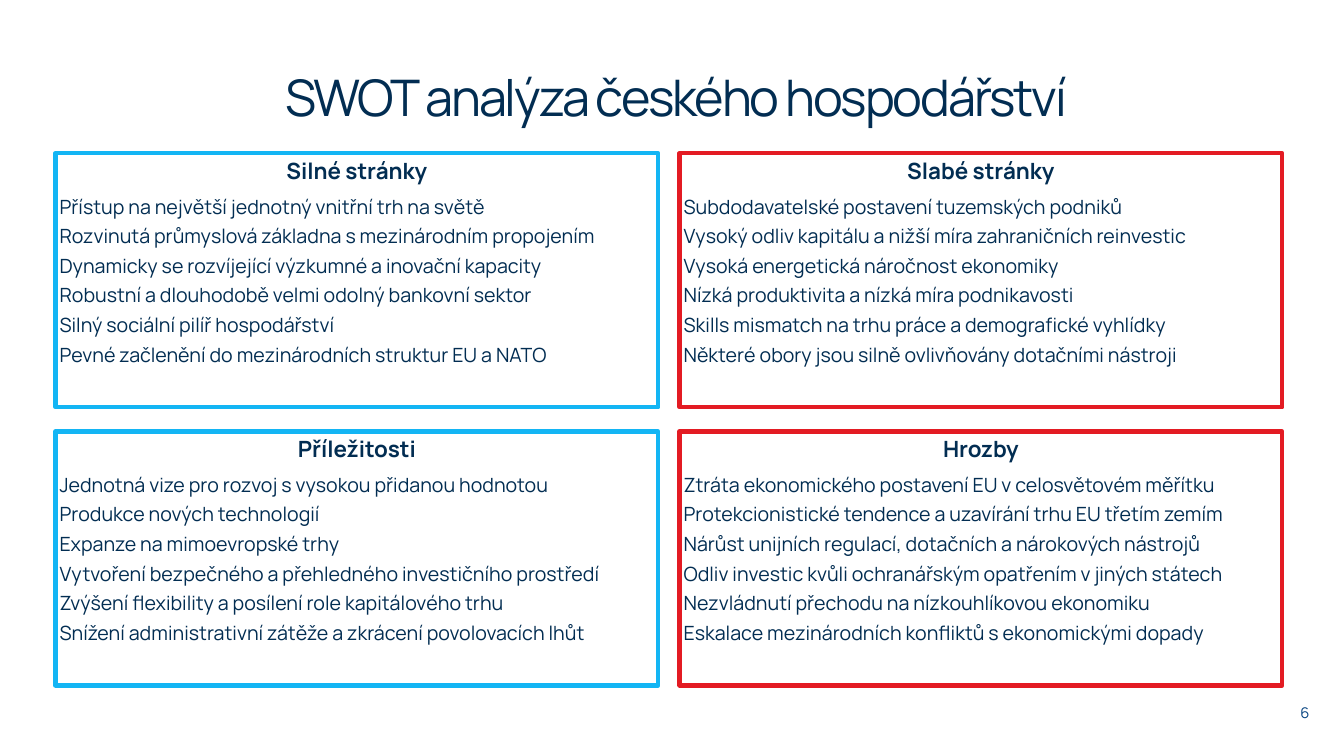
from dataclasses import dataclass

import lxml.etree
import pptx
import pptx.dml.color
import pptx.enum.text
import pptx.oxml.ns
import pptx.util

ALIGN = pptx.enum.text.PP_ALIGN
ANCHOR = pptx.enum.text.MSO_ANCHOR


@dataclass(frozen=True)
class Theme:
    font: str = "Manrope"
    ink: str = "022D52"
    page: str = "044280"
    paper: str = "FFFFFF"
    positive: str = "13B5F4"
    negative: str = "E31B23"
    title_pt: float = 36
    heading_pt: float = 16
    item_pt: float = 14
    page_pt: float = 10.5


@dataclass(frozen=True)
class Area:
    """A rectangle in percent of the slide's width and height."""
    left: float
    top: float
    width: float
    height: float


@dataclass(frozen=True)
class Quadrant:
    col: int
    row: int
    colour: str
    heading: str
    items: tuple[str, ...]


THEME = Theme()
SLIDE_W = pptx.util.Inches(13.33)
SLIDE_H = pptx.util.Inches(7.5)
TITLE = Area(4.13, 8.13, 92.4, 10.13)
PAGE_NUMBER = Area(85.8, 92.4, 12.38, 3.87)
FIRST_CELL = Area(4.13, 20.27, 44.85, 33.6)
COL_STEP, ROW_STEP = 46.43, 36.8

QUADRANTS = (
    Quadrant(0, 0, THEME.positive, "Silné stránky", (
        "Přístup na největší jednotný vnitřní trh na světě",
        "Rozvinutá průmyslová základna s mezinárodním propojením",
        "Dynamicky se rozvíjející výzkumné a inovační kapacity",
        "Robustní a dlouhodobě velmi odolný bankovní sektor",
        "Silný sociální pilíř hospodářství",
        "Pevné začlenění do mezinárodních struktur EU a NATO",
    )),
    Quadrant(0, 1, THEME.positive, "Příležitosti", (
        "Jednotná vize pro rozvoj s vysokou přidanou hodnotou",
        "Produkce nových technologií",
        "Expanze na mimoevropské trhy",
        "Vytvoření bezpečného a přehledného investičního prostředí",
        "Zvýšení flexibility a posílení role kapitálového trhu",
        "Snížení administrativní zátěže a zkrácení povolovacích lhůt",
    )),
    Quadrant(1, 0, THEME.negative, "Slabé stránky", (
        "Subdodavatelské postavení tuzemských podniků",
        "Vysoký odliv kapitálu a nižší míra zahraničních reinvestic",
        "Vysoká energetická náročnost ekonomiky",
        "Nízká produktivita a nízká míra podnikavosti",
        "Skills mismatch na trhu práce a demografické vyhlídky",
        "Některé obory jsou silně ovlivňovány dotačními nástroji",
    )),
    Quadrant(1, 1, THEME.negative, "Hrozby", (
        "Ztráta ekonomického postavení EU v celosvětovém měřítku",
        "Protekcionistické tendence a uzavírání trhu EU třetím zemím",
        "Nárůst unijních regulací, dotačních a nárokových nástrojů",
        "Odliv investic kvůli ochranářským opatřením v jiných státech",
        "Nezvládnutí přechodu na nízkouhlíkovou ekonomiku",
        "Eskalace mezinárodních konfliktů s ekonomickými dopady",
    )),
)


def rgb(colour: str) -> pptx.dml.color.RGBColor:
    return pptx.dml.color.RGBColor.from_string(colour)


def place(sp, area: Area) -> None:
    sp.left = round(SLIDE_W * area.left / 100)
    sp.top = round(SLIDE_H * area.top / 100)
    sp.width = round(SLIDE_W * area.width / 100)
    sp.height = round(SLIDE_H * area.height / 100)


def set_frame(tf, anchor: ANCHOR, inset_x: float, inset_y: float) -> None:
    tf.word_wrap = True
    tf.auto_size = pptx.enum.text.MSO_AUTO_SIZE.NONE
    tf.vertical_anchor = anchor
    tf.margin_left = tf.margin_right = pptx.util.Inches(inset_x)
    tf.margin_top = tf.margin_bottom = pptx.util.Inches(inset_y)


def write(p, text: str, size: float, align: ALIGN, colour: str = THEME.ink,
          bold: bool = False, before: float = 0, after: float = 0,
          spacing: float = 1.0):
    """Format a paragraph, add its one run and return the run."""
    p.alignment = align
    p.space_before = pptx.util.Pt(before)
    p.space_after = pptx.util.Pt(after)
    p.line_spacing = spacing
    r = p.add_run()
    r.text = text
    r.font.name = THEME.font
    r.font.size = pptx.util.Pt(size)
    r.font.bold = bold
    r.font.color.rgb = rgb(colour)
    return r


def remove_bullet(p) -> None:
    pPr = p._p.get_or_add_pPr()
    pPr.set("marL", "0")
    pPr.set("indent", "0")
    lxml.etree.SubElement(pPr, pptx.oxml.ns.qn("a:buNone"))


def draw_title(sp) -> None:
    place(sp, TITLE)
    set_frame(sp.text_frame, ANCHOR.MIDDLE, 0.1, 0.05)
    r = write(sp.text_frame.paragraphs[0], "SWOT analýza českého hospodářství",
              THEME.title_pt, ALIGN.CENTER, spacing=0.9)
    r._r.get_or_add_rPr().set("spc", "-150")


def draw_quadrant(sp, quadrant: Quadrant) -> None:
    place(sp, Area(FIRST_CELL.left + quadrant.col * COL_STEP,
                   FIRST_CELL.top + quadrant.row * ROW_STEP,
                   FIRST_CELL.width, FIRST_CELL.height))
    sp.fill.solid()
    sp.fill.fore_color.rgb = rgb(THEME.paper)
    sp.line.color.rgb = rgb(quadrant.colour)
    sp.line.width = pptx.util.Pt(3)
    tf = sp.text_frame
    set_frame(tf, ANCHOR.TOP, 0.04, 0.04)
    write(tf.paragraphs[0], quadrant.heading, THEME.heading_pt, ALIGN.CENTER,
          bold=True, before=6, after=6)
    for item in quadrant.items:
        write(tf.add_paragraph(), item, THEME.item_pt, ALIGN.LEFT,
              after=3, spacing=1.08)
    for p in tf.paragraphs:
        remove_bullet(p)


def draw_page_number(s) -> None:
    sp = s.shapes.add_textbox(0, 0, 0, 0)
    place(sp, PAGE_NUMBER)
    set_frame(sp.text_frame, ANCHOR.TOP, 0.1, 0.05)
    write(sp.text_frame.paragraphs[0], "6", THEME.page_pt, ALIGN.RIGHT,
          colour=THEME.page)


def main() -> None:
    prs = pptx.Presentation()
    prs.slide_width, prs.slide_height = SLIDE_W, SLIDE_H
    s = prs.slides.add_slide(prs.slide_layouts.get_by_name("Comparison"))
    title, *bodies = s.placeholders
    draw_title(title)
    for sp, quadrant in zip(bodies, QUADRANTS):
        draw_quadrant(sp, quadrant)
    draw_page_number(s)
    prs.save("out.pptx")


if __name__ == "__main__":
    main()
